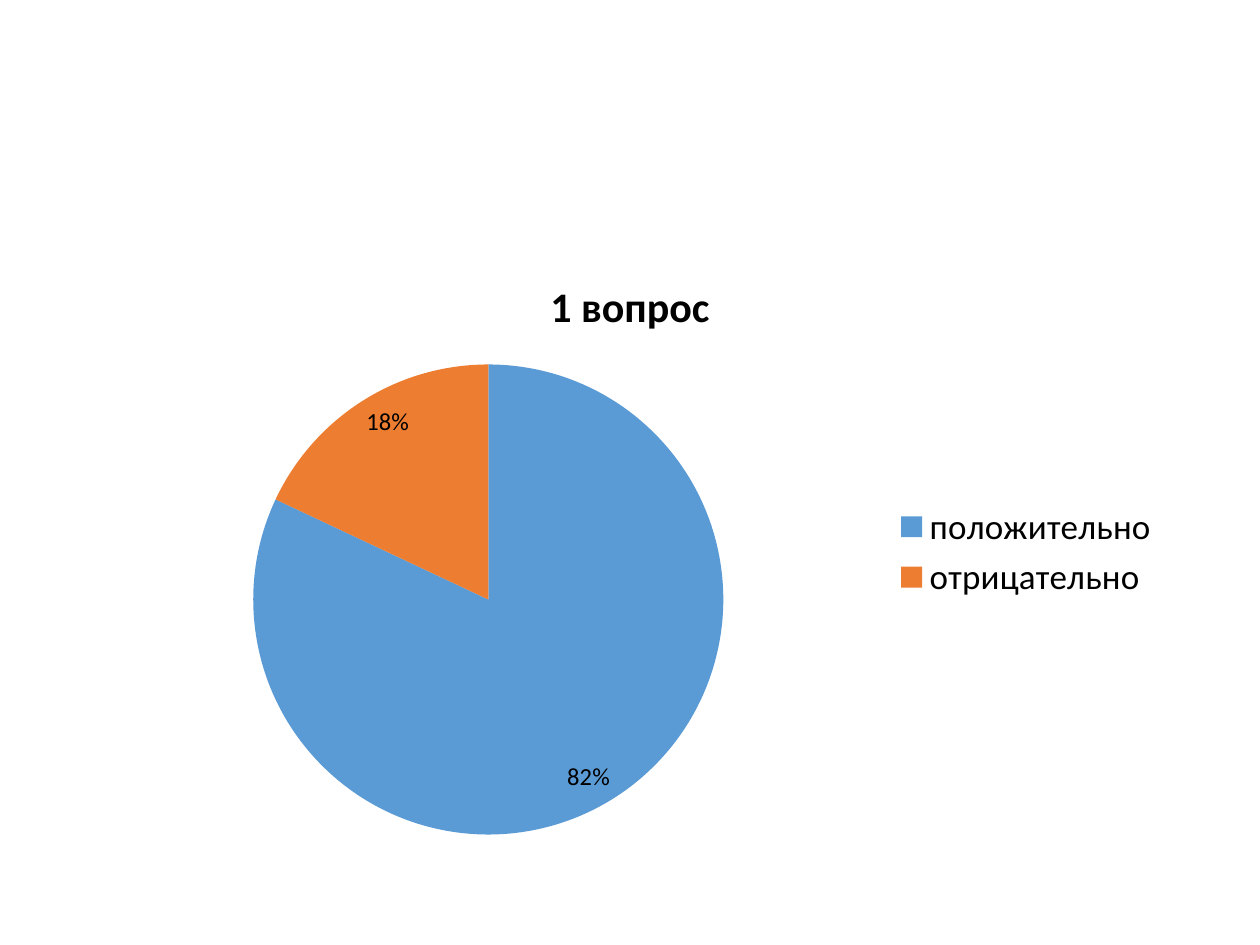
from pptx import Presentation
from pptx.chart.data import CategoryChartData
from pptx.dml.color import RGBColor
from pptx.enum.chart import XL_CHART_TYPE, XL_LABEL_POSITION, XL_LEGEND_POSITION
from pptx.util import Pt

PX = 914400 // 126
FONT = "Calibri"
BLACK = RGBColor(0x00, 0x00, 0x00)
BLUE = RGBColor(0x5B, 0x9B, 0xD5)
ORANGE = RGBColor(0xED, 0x7D, 0x31)
PIE = XL_CHART_TYPE.PIE
RIGHT = XL_LEGEND_POSITION.RIGHT
INSIDE = XL_LABEL_POSITION.INSIDE_END

# Answer, share in percent, slice colour
ANSWERS = [("положительно", 82, BLUE), ("отрицательно", 18, ORANGE)]


def style(font, size, bold=False):
    font.name = FONT
    font.size = Pt(size)
    font.bold = bold
    font.color.rgb = BLACK


def add_pie(slide, box, title, answers):
    names, shares, colors = zip(*answers)
    data = CategoryChartData()
    data.categories = names
    data.add_series(title, shares)
    frame = slide.shapes.add_chart(PIE, *(n * PX for n in box), data)
    chart = frame.chart
    style(chart.font, 10)

    # Title
    chart.has_title = True
    text = chart.chart_title.text_frame
    text.text = title
    style(text.paragraphs[0].runs[0].font, 24, bold=True)
    chart.chart_title.include_in_layout = False

    # Legend
    chart.has_legend = True
    chart.legend.position = RIGHT
    chart.legend.include_in_layout = False
    style(chart.legend.font, 20)

    # Slices
    plot = chart.plots[0]
    plot.vary_by_categories = True
    for i, color in enumerate(colors):
        fill = plot.series[0].points[i].format.fill
        fill.solid()
        fill.fore_color.rgb = color

    # Percent labels
    plot.has_data_labels = True
    labels = plot.data_labels
    labels.show_value = False
    labels.show_percentage = True
    labels.number_format = "0%"
    labels.number_format_is_linked = False
    labels.position = INSIDE
    style(labels.font, 14)


def main():
    deck = Presentation()
    deck.slide_width = 1260 * PX
    deck.slide_height = 945 * PX
    slide = deck.slides.add_slide(deck.slide_layouts[6])
    add_pie(slide, (87, 252, 1086, 600), "1 вопрос", ANSWERS)
    deck.save("out.pptx")


if __name__ == "__main__":
    main()
